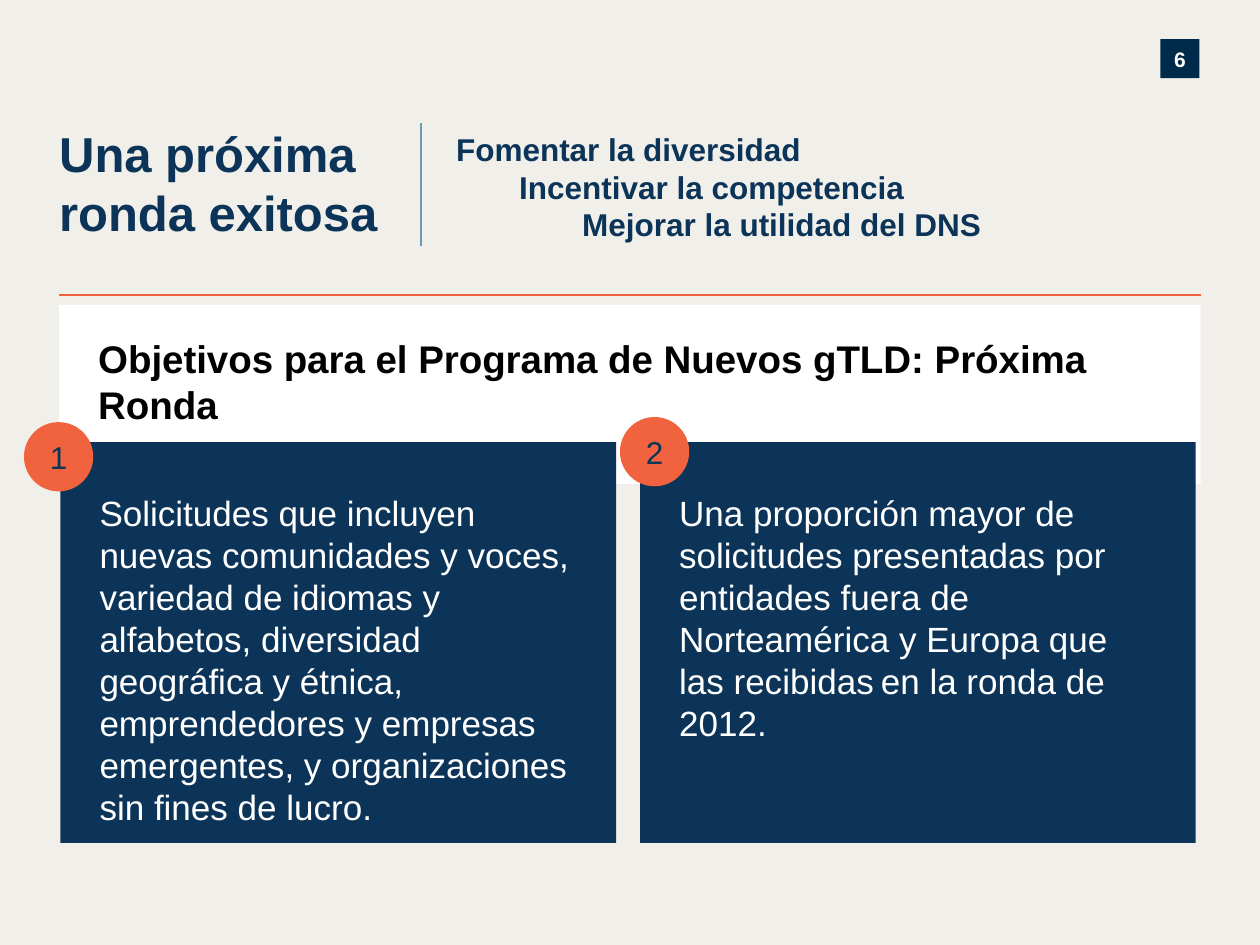
from pptx import Presentation
from pptx.dml.color import RGBColor
from pptx.enum import shapes, text
from pptx.oxml.ns import qn
from pptx.util import Inches, Pt
from lxml import etree

NAVY = RGBColor(0x0B, 0x34, 0x58)
DARK = RGBColor(0x00, 0x2A, 0x49)
ORANGE = RGBColor(0xF1, 0x63, 0x3E)
BLUE = RGBColor(0x6D, 0x99, 0xB3)
CREAM = RGBColor(0xF1, 0xEF, 0xEA)
WHITE = RGBColor(0xFF, 0xFF, 0xFF)
BLACK = RGBColor(0x00, 0x00, 0x00)

RECT = shapes.MSO_SHAPE.RECTANGLE
OVAL = shapes.MSO_SHAPE.OVAL
TOP, MIDDLE = text.MSO_ANCHOR.TOP, text.MSO_ANCHOR.MIDDLE
LEFT, CENTER = text.PP_ALIGN.LEFT, text.PP_ALIGN.CENTER

EDGE, RIGHT = 0.47, 9.53
CARD_TOP, CARD_W, CARD_H = 3.51, 4.41, 3.18
BADGE = 0.55

CARDS = [
    # left, right inset, badge position, text runs
    (0.48, 0.31, (0.19, 3.35), [
        "Solicitudes que incluyen nuevas comunidades y voces, variedad de "
        "idiomas y alfabetos, diversidad geográfica y étnica, emprendedores y "
        "empresas emergentes, y organizaciones sin fines de lucro."]),
    (5.08, 0.55, (4.92, 3.31), [
        "Una proporción mayor de solicitudes presentadas por entidades fuera "
        "de Norteamérica y Europa que las recibidas",
        " ",
        "en la ronda de 2012."]),
]
GOALS = ["Fomentar la diversidad",
         "\tIncentivar la competencia",
         "\t\tMejorar la utilidad del DNS"]


def style_run(r, size, color, bold=False):
    r.font.name = "Arial"
    r.font.size = Pt(size)
    r.font.bold = bold
    r.font.color.rgb = color


def set_frame(tf, insets=(0, 0, 0, 0), anchor=TOP):
    tf.word_wrap = True
    tf.auto_size = text.MSO_AUTO_SIZE.NONE
    tf.vertical_anchor = anchor
    (tf.margin_left, tf.margin_top,
     tf.margin_right, tf.margin_bottom) = [Inches(i) for i in insets]


def write(tf, content, size, color, bold=False, align=LEFT):
    tf.text = content
    for p in tf.paragraphs:
        p.alignment = align
        for r in p.runs:
            style_run(r, size, color, bold)


def add_block(s, kind, box, fill, insets=(0, 0, 0, 0), anchor=TOP):
    sp = s.shapes.add_shape(kind, *[Inches(v) for v in box])
    sp.shadow.inherit = False
    sp.fill.solid()
    sp.fill.fore_color.rgb = fill
    sp.line.fill.background()
    set_frame(sp.text_frame, insets, anchor)
    return sp.text_frame


def add_rule(s, x1, y1, x2, y2, color):
    line = s.shapes.add_connector(shapes.MSO_CONNECTOR.STRAIGHT,
                                  *[Inches(v) for v in (x1, y1, x2, y2)])
    line.line.color.rgb = color
    line.line.width = Pt(1.25)
    etree.SubElement(line._element.spPr, qn("a:effectLst"))


def add_title(s):
    sp = s.shapes.title
    sp.left, sp.top, sp.width, sp.height = [
        Inches(v) for v in (EDGE, 0.98, 3.25, 0.96)]
    set_frame(sp.text_frame)
    write(sp.text_frame, "Una próxima ronda exitosa", 28, NAVY, True)


def add_goals(s):
    sp = s.shapes.add_textbox(Inches(3.62), Inches(1.03),
                              Inches(5.91), Inches(0.91))
    set_frame(sp.text_frame)
    write(sp.text_frame, "\n".join(GOALS), 18, NAVY, True)


def add_card(s, left, inset, runs):
    tf = add_block(s, RECT, (left, CARD_TOP, CARD_W, CARD_H), NAVY,
                   (0.31, 0.39, inset, 0.3))
    p = tf.paragraphs[0]
    p.alignment = LEFT
    for words in runs:
        r = p.add_run()
        r.text = words
        style_run(r, 20 if words.strip() else 14, WHITE)


def add_badge(s, number, position):
    tf = add_block(s, OVAL, (*position, BADGE, BADGE), ORANGE,
                   (0.1, 0.05, 0.1, 0.05), MIDDLE)
    write(tf, str(number), 18, NAVY, align=CENTER)


def main():
    prs = Presentation()
    prs.slide_width, prs.slide_height = Inches(10), Inches(7.5)
    s = prs.slides.add_slide(prs.slide_layouts[5])
    s.background.fill.solid()
    s.background.fill.fore_color.rgb = CREAM

    # Page number
    tf = add_block(s, RECT, (9.21, 0.31, 0.31, 0.31), DARK, anchor=MIDDLE)
    write(tf, "6", 12, WHITE, True, CENTER)
    tf.paragraphs[0].line_spacing = 1.08

    # Heading panel
    tf = add_block(s, RECT, (EDGE, 2.42, RIGHT - EDGE, 1.42), WHITE,
                   (0.31, 0.24, 0.79, 0.3))
    write(tf, "Objetivos para el Programa de Nuevos gTLD: Próxima Ronda",
          22, BLACK, True)

    # Title, divider and goals
    add_title(s)
    add_goals(s)
    add_rule(s, 3.34, 0.98, 3.34, 1.95, BLUE)

    # Objective cards, then their numbers on top
    for left, inset, _, runs in reversed(CARDS):
        add_card(s, left, inset, runs)
    for number, (_, _, position, _) in enumerate(CARDS, 1):
        add_badge(s, number, position)

    # Rule under the header
    add_rule(s, EDGE, 2.34, RIGHT, 2.34, ORANGE)
    prs.save("out.pptx")


if __name__ == "__main__":
    main()
